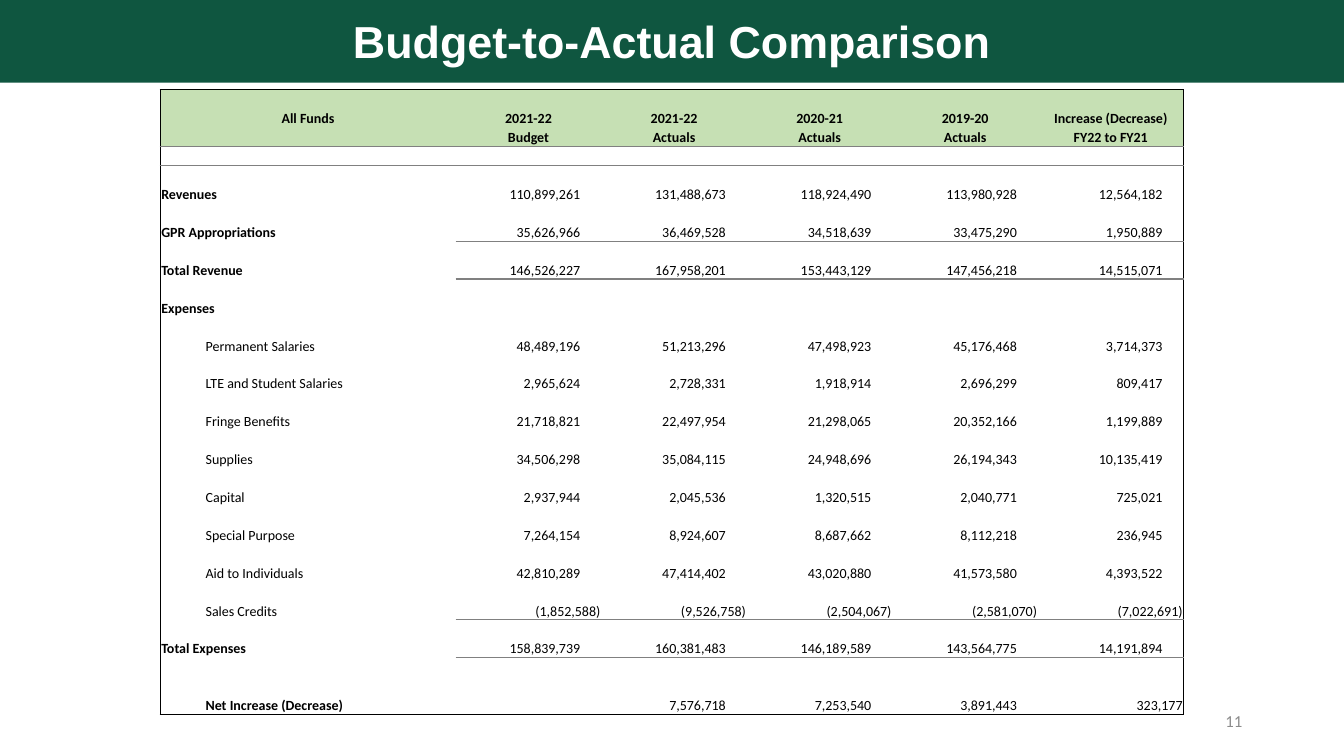
from lxml.etree import SubElement
from pptx import Presentation
from pptx.dml.color import RGBColor
from pptx.enum.shapes import MSO_SHAPE
from pptx.enum.text import MSO_ANCHOR as Anchor, PP_ALIGN as Align
from pptx.oxml.ns import qn
from pptx.util import Inches, Pt

COLORS = {"green": "0F5640", "header": "C6E0B4", "black": "000000",
          "rule": "808080", "white": "FFFFFF", "number": "8C8C8C"}
NO_STYLE = "{2D5ABB26-0587-4C30-8999-92F81FD0307C}"
WIDTH, HEIGHT = 13.33, 7.5
INDENT, LABEL_WIDTH, VALUE_COLUMNS = 0.44, 2.49, 5
FLUSH, INSET_RIGHT = 0.01, 0.21

HEADINGS = [
    ["All Funds", "", "2021-22", "2021-22", "2020-21", "2019-20", "Increase (Decrease)"],
    ["", "", "Budget", "Actuals", "Actuals", "Actuals", "FY22 to FY21"],
]
BLANK = ("", 1, "")
LINES = [
    BLANK,
    ("Revenues", 0, "110,899,261 131,488,673 118,924,490 113,980,928 12,564,182"),
    ("GPR Appropriations", 0, "35,626,966 36,469,528 34,518,639 33,475,290 1,950,889"),
    ("Total Revenue", 0, "146,526,227 167,958,201 153,443,129 147,456,218 14,515,071"),
    BLANK,
    ("Expenses", 0, ""),
    ("Permanent Salaries", 1, "48,489,196 51,213,296 47,498,923 45,176,468 3,714,373"),
    ("LTE and Student Salaries", 1, "2,965,624 2,728,331 1,918,914 2,696,299 809,417"),
    ("Fringe Benefits", 1, "21,718,821 22,497,954 21,298,065 20,352,166 1,199,889"),
    ("Supplies", 1, "34,506,298 35,084,115 24,948,696 26,194,343 10,135,419"),
    ("Capital", 1, "2,937,944 2,045,536 1,320,515 2,040,771 725,021"),
    ("Special Purpose", 1, "7,264,154 8,924,607 8,687,662 8,112,218 236,945"),
    ("Aid to Individuals", 1, "42,810,289 47,414,402 43,020,880 41,573,580 4,393,522"),
    ("Sales Credits", 1, "(1,852,588) (9,526,758) (2,504,067) (2,581,070) (7,022,691)"),
    ("Total Expenses", 0, "158,839,739 160,381,483 146,189,589 143,564,775 14,191,894"),
    BLANK,
    ("Net Increase (Decrease)", 1, "- 7,576,718 7,253,540 3,891,443 323,177"),
]
SHORT_ROWS = {1, 2, 6, 7, 17}
RULED_ROWS = {4, 15}
LAST_ROW = len(HEADINGS) + len(LINES) - 1
LAST_COLUMN = VALUE_COLUMNS + 1


def write_text(frame, text, size=10, font="Calibri", color="black", bold=False,
               align=Align.LEFT):
    """Write one formatted paragraph; an empty one only keeps its size."""
    paragraph = frame.paragraphs[0]
    paragraph.alignment = align
    if not text:
        SubElement(paragraph._p, qn("a:endParaRPr"), sz=str(size * 100))
        return
    run = paragraph.add_run()
    run.text = text
    run.font.size, run.font.name, run.font.bold = Pt(size), font, bold
    run.font.color.rgb = RGBColor.from_string(COLORS[color])


def draw_borders(cell, row, column):
    """Draw the outer frame and the rules of one cell."""
    ruled = row == 1 or (row == 0 and column < 2) or (row in RULED_ROWS and column > 1)
    under_rule = row == 2 or (row - 1 in RULED_ROWS and column > 1)
    sides = {
        "L": "black" if column == 0 else None,
        "R": "black" if column == LAST_COLUMN else None,
        "T": "black" if row == 0 else "rule" if under_rule else None,
        "B": "black" if row == LAST_ROW else "rule" if ruled else None,
    }
    properties = cell._tc.get_or_add_tcPr()
    for side, color in sides.items():
        if color:
            line = SubElement(properties, qn(f"a:ln{side}"), w=str(Pt(1)))
            fill = SubElement(line, qn("a:solidFill"))
            SubElement(fill, qn("a:srgbClr"), val=COLORS[color])


def table_contents():
    """Return the table as rows of seven strings."""
    rows = list(HEADINGS)
    for label, level, values in LINES:
        labels = ["", label] if level else [label, ""]
        numbers = [value.strip("-") for value in values.split()]
        rows.append(labels + (numbers or [""] * VALUE_COLUMNS))
    return rows


def format_cell(cell, text, row, column):
    """Fill, frame and write one cell of the table."""
    heading, value = row < len(HEADINGS), column > 1
    flush = text.startswith("(") or (row, column) == (LAST_ROW, LAST_COLUMN)
    indented = value and not heading and not flush
    cell.margin_left = cell.margin_top = Inches(FLUSH)
    cell.margin_right = Inches(INSET_RIGHT if indented else FLUSH)
    cell.margin_bottom = 0
    cell.vertical_anchor = Anchor.MIDDLE if heading and not value else Anchor.BOTTOM
    draw_borders(cell, row, column)
    if heading:
        cell.fill.solid()
        cell.fill.fore_color.rgb = RGBColor.from_string(COLORS["header"])
    else:
        cell.fill.background()
    bold = heading or column == 0 or (row == LAST_ROW and column == 1)
    align = Align.CENTER if heading else Align.RIGHT if value else Align.LEFT
    write_text(cell.text_frame, text, bold=bold, align=align)


def add_budget_table(slide, left, top, width, height):
    """Add the comparison table, short rows being half as high as the others."""
    contents = table_contents()
    shape = slide.shapes.add_table(len(contents), LAST_COLUMN + 1, Inches(left),
                                   Inches(top), Inches(width), Inches(height))
    table = shape.table
    table.first_row = table.horz_banding = False
    table._tbl.tblPr.find(qn("a:tableStyleId")).text = NO_STYLE
    value_width = (width - INDENT - LABEL_WIDTH) / VALUE_COLUMNS
    widths = [INDENT, LABEL_WIDTH] + [value_width] * VALUE_COLUMNS
    for column, column_width in zip(table.columns, widths):
        column.width = Inches(column_width)
    unit = height / (2 * len(contents) - len(SHORT_ROWS))
    for row, texts in enumerate(contents):
        table.rows[row].height = Inches(unit if row in SHORT_ROWS else 2 * unit)
        for column, text in enumerate(texts):
            format_cell(table.cell(row, column), text, row, column)
    table.cell(0, 0).merge(table.cell(1, 1))
    for row, (label, level, _) in enumerate(LINES, len(HEADINGS)):
        if level == 0:
            table.cell(row, 0).merge(table.cell(row, 1))


def add_title_bar(slide, left, top, width, height):
    """Add the coloured bar with the slide title."""
    bar = slide.shapes.add_shape(MSO_SHAPE.RECTANGLE, Inches(left), Inches(top),
                                 Inches(width), Inches(height))
    bar.shadow.inherit = False
    bar.fill.solid()
    bar.fill.fore_color.rgb = RGBColor.from_string(COLORS["green"])
    bar.line.fill.background()
    bar.text_frame.word_wrap = True
    bar.text_frame.vertical_anchor = Anchor.MIDDLE
    write_text(bar.text_frame, "Budget-to-Actual Comparison", size=32, font="Arial",
               color="white", bold=True, align=Align.CENTER)


def add_page_number(slide, left, top, width, height):
    """Add the page number at the lower right."""
    box = slide.shapes.add_textbox(Inches(left), Inches(top), Inches(width), Inches(height))
    box.text_frame.word_wrap = True
    box.text_frame.vertical_anchor = Anchor.MIDDLE
    write_text(box.text_frame, "11", size=12, color="number", align=Align.RIGHT)


def main():
    """Build the slide and save it."""
    presentation = Presentation()
    presentation.slide_width, presentation.slide_height = Inches(WIDTH), Inches(HEIGHT)
    slide = presentation.slides.add_slide(presentation.slide_layouts[6])
    add_budget_table(slide, 1.59, 0.89, 10.15, 6.2)
    add_title_bar(slide, 0, -0.01, WIDTH, 0.83)
    add_page_number(slide, 9.42, 6.95, 3, 0.4)
    presentation.save("out.pptx")


if __name__ == "__main__":
    main()
